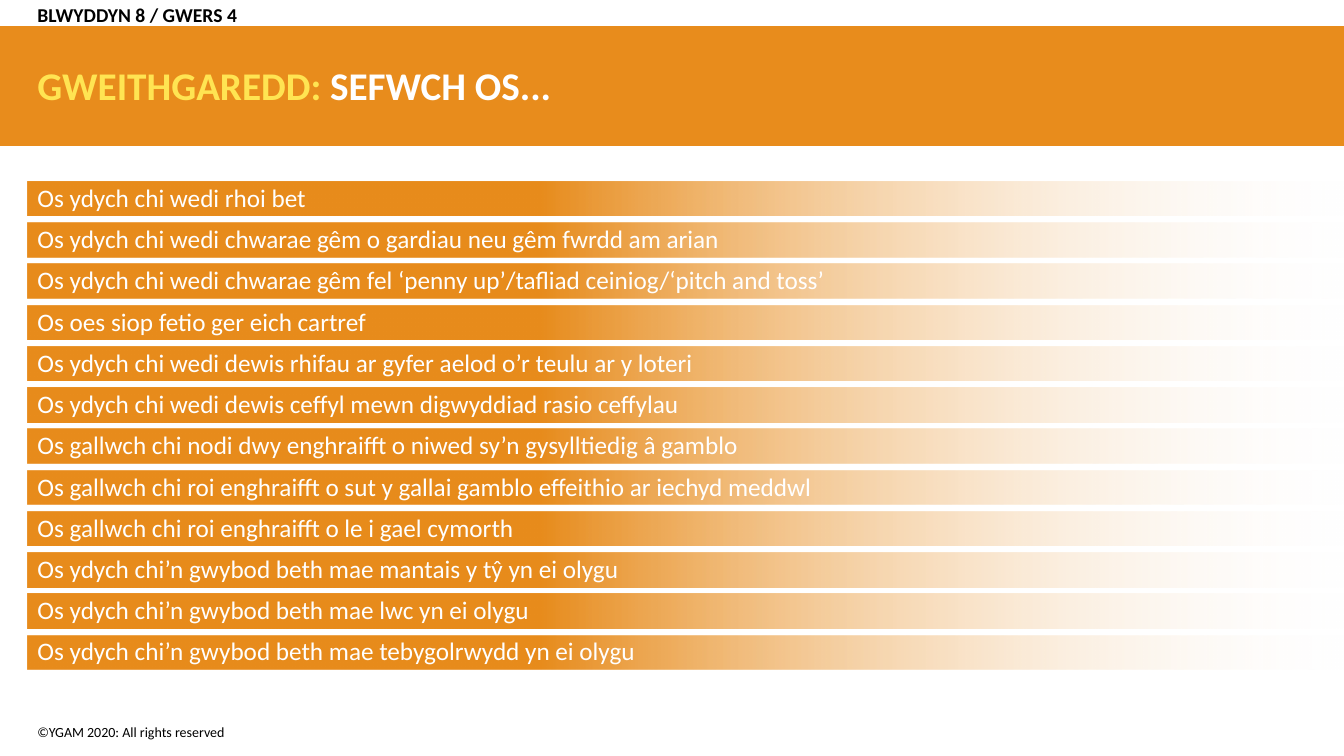
from dataclasses import dataclass

import lxml.etree
import pptx
import pptx.dml.color
import pptx.enum.shapes
import pptx.enum.text
import pptx.oxml.ns
import pptx.util
from pptx.util import Cm, Pt

FONT = "Calibri"
ORANGE, YELLOW, WHITE, BLACK = "E88C1C", "FFE452", "FFFFFF", "000000"
SLIDE_WIDTH, SLIDE_HEIGHT = 33.87, 19.05
MARGIN = 0.69
BAR_TOP, BAR_HEIGHT, BAR_PITCH = 4.57, 0.87, 1.04

STATEMENTS = [
    "Os ydych chi wedi rhoi bet",
    "Os ydych chi wedi chwarae gêm o gardiau neu gêm fwrdd am arian",
    "Os ydych chi wedi chwarae gêm fel ‘penny up’/tafliad ceiniog/‘pitch and toss’",
    "Os oes siop fetio ger eich cartref",
    "Os ydych chi wedi dewis rhifau ar gyfer aelod o’r teulu ar y loteri",
    "Os ydych chi wedi dewis ceffyl mewn digwyddiad rasio ceffylau",
    "Os gallwch chi nodi dwy enghraifft o niwed sy’n gysylltiedig â gamblo",
    "Os gallwch chi roi enghraifft o sut y gallai gamblo effeithio ar iechyd meddwl",
    "Os gallwch chi roi enghraifft o le i gael cymorth",
    "Os ydych chi’n gwybod beth mae mantais y tŷ yn ei olygu",
    "Os ydych chi’n gwybod beth mae lwc yn ei olygu",
    "Os ydych chi’n gwybod beth mae tebygolrwydd yn ei olygu",
]


@dataclass
class Run:
    text: str
    size: float
    colour: str
    bold: bool = False


@dataclass
class Box:
    """Position and size in centimetres."""
    left: float
    top: float
    width: float
    height: float

    def lengths(self) -> list[pptx.util.Length]:
        return [Cm(v) for v in (self.left, self.top, self.width, self.height)]


def rgb(colour: str) -> pptx.dml.color.RGBColor:
    return pptx.dml.color.RGBColor.from_string(colour)


def add_rectangle(slide, box: Box):
    rectangle = slide.shapes.add_shape(
        pptx.enum.shapes.MSO_SHAPE.RECTANGLE, *box.lengths())
    rectangle.shadow.inherit = False
    rectangle.line.fill.background()
    return rectangle


def add_fading_bar(slide, box: Box) -> None:
    bar = add_rectangle(slide, box)
    bar.fill.gradient()
    bar.fill.gradient_angle = 0
    solid_end, clear_end = bar.fill.gradient_stops
    solid_end.position, solid_end.color.rgb = 0.38, rgb(ORANGE)
    clear_end.position, clear_end.color.rgb = 1, rgb(WHITE)
    qn = pptx.oxml.ns.qn
    clear_colour = list(bar._element.spPr.iter(qn("a:srgbClr")))[-1]
    lxml.etree.SubElement(clear_colour, qn("a:alpha"), val="0")


def write(shape, paragraphs: list[list[Run]], anchor, line_spacing: float = 0.9) -> None:
    """Fill a text shape with left-aligned paragraphs without bullets."""
    frame = shape.text_frame
    frame.word_wrap = True
    frame.auto_size = pptx.enum.text.MSO_AUTO_SIZE.NONE
    frame.vertical_anchor = anchor
    for index, runs in enumerate(paragraphs):
        paragraph = frame.add_paragraph() if index else frame.paragraphs[0]
        properties = paragraph._p.get_or_add_pPr()
        properties.set("marL", "0")
        properties.set("indent", "0")
        lxml.etree.SubElement(properties, pptx.oxml.ns.qn("a:buNone"))
        paragraph.alignment = pptx.enum.text.PP_ALIGN.LEFT
        paragraph.line_spacing = line_spacing
        paragraph.space_before = Pt(10 if index else 0)
        for part in runs:
            run = paragraph.add_run()
            run.text = part.text
            run.font.name = FONT
            run.font.size = Pt(part.size)
            run.font.bold = part.bold
            run.font.color.rgb = rgb(part.colour)


def place_on_top(slide, placeholder, box: Box) -> None:
    (placeholder.left, placeholder.top,
     placeholder.width, placeholder.height) = box.lengths()
    slide.shapes._spTree.append(placeholder._element)


def main() -> None:
    presentation = pptx.Presentation()
    presentation.slide_width = Cm(SLIDE_WIDTH)
    presentation.slide_height = Cm(SLIDE_HEIGHT)
    slide = presentation.slides.add_slide(
        presentation.slide_layouts.get_by_name("Two Content"))
    title, lesson, statements = slide.placeholders
    top = pptx.enum.text.MSO_ANCHOR.TOP
    middle = pptx.enum.text.MSO_ANCHOR.MIDDLE

    banner = add_rectangle(slide, Box(0, 0.66, SLIDE_WIDTH, 3.02))
    banner.fill.solid()
    banner.fill.fore_color.rgb = rgb(ORANGE)

    copyright_line = slide.shapes.add_textbox(*Box(MARGIN, 18.11, 14.33, 0.69).lengths())
    write(copyright_line, [[Run("©YGAM 2020: All rights reserved", 10, BLACK)]], top, 1)

    for row in range(len(STATEMENTS)):
        add_fading_bar(slide, Box(MARGIN, BAR_TOP + row * BAR_PITCH, SLIDE_WIDTH, BAR_HEIGHT))

    place_on_top(slide, title, Box(MARGIN, 0.69, 32.41, 3.02))
    write(title, [[Run("GWEITHGAREDD: ", 28, YELLOW, True),
                   Run("SEFWCH OS...", 28, WHITE, True)]], middle)

    place_on_top(slide, lesson, Box(MARGIN, -0.15, 14.88, 1.12))
    write(lesson, [[Run("BLWYDDYN 8 / GWERS 4", 14, BLACK, True)]], middle)

    place_on_top(slide, statements, Box(MARGIN, 4.55, 21.79, 12.62))
    write(statements, [[Run(text, 18, WHITE)] for text in STATEMENTS], top)

    presentation.save("out.pptx")


if __name__ == "__main__":
    main()
